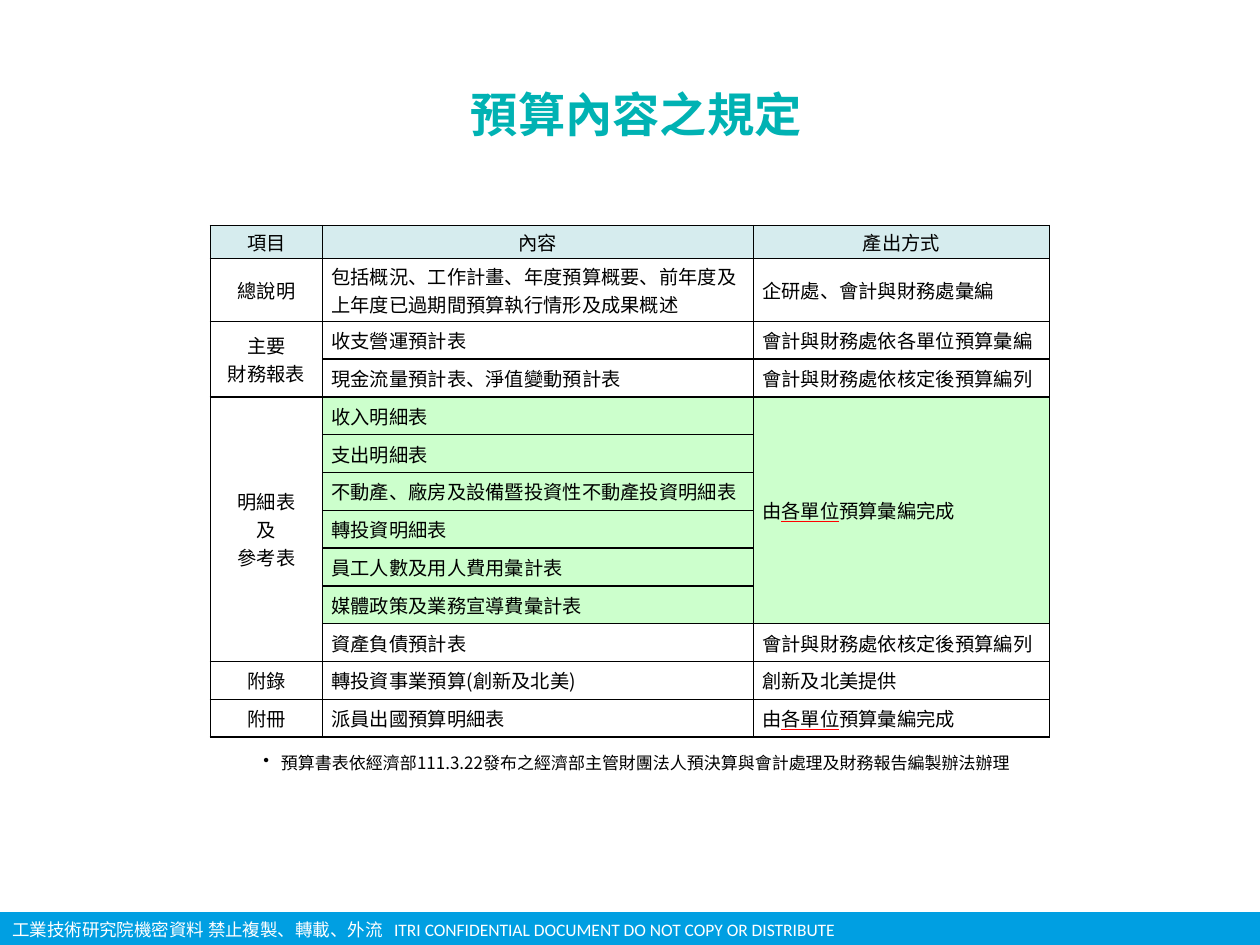
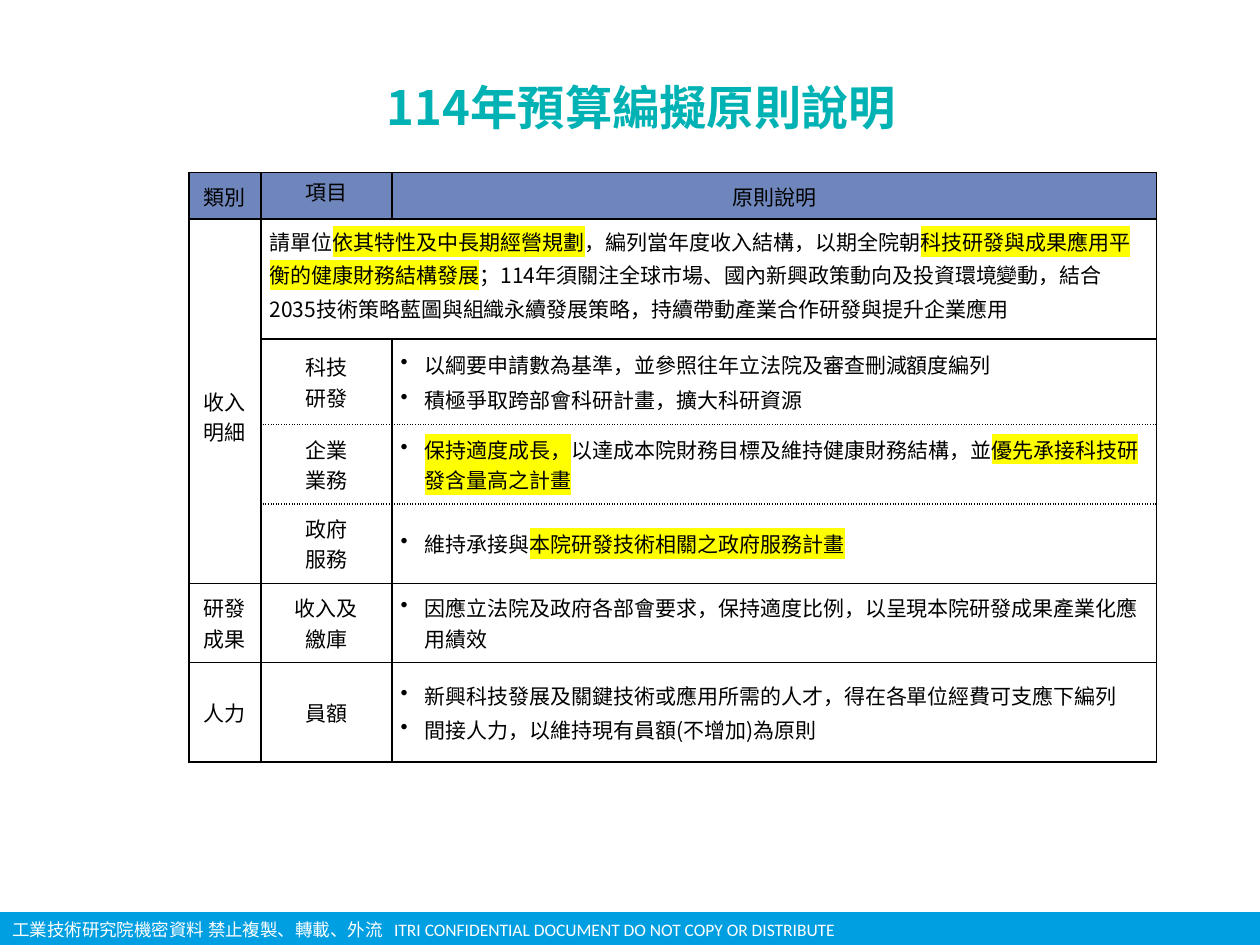
"""Build two slides on budget content rules and budget drafting principles."""
from copy import deepcopy
from dataclasses import dataclass

from lxml.etree import SubElement
from pptx import Presentation
from pptx.dml.color import RGBColor
from pptx.enum.shapes import MSO_SHAPE
from pptx.enum.text import MSO_ANCHOR, PP_ALIGN
from pptx.oxml import parse_xml
from pptx.oxml.ns import nsdecls, qn
from pptx.util import Inches, Pt


@dataclass(frozen=True)
class Theme:
    teal: str = "00B2B3"
    band: str = "009FE2"
    white: str = "FFFFFF"
    black: str = "000000"
    pale_blue: str = "D6ECEE"
    slate_blue: str = "6F86BC"
    green: str = "CCFFCC"
    yellow: str = "FFFF00"
    red: str = "FF0000"
    font: str = "Noto Sans CJK SC"
    footer_font: str = "Calibri"
    title_size: float = 27
    footer_size: float = 10
    note_size: float = 9.7


theme = Theme()
HIGHLIGHT = f'<a:highlight {nsdecls("a")}><a:srgbClr val="{theme.yellow}"/></a:highlight>'
UNDERLINE = f'<a:uFill {nsdecls("a")}><a:solidFill><a:srgbClr val="{theme.red}"/></a:solidFill></a:uFill>'


def write_text(frame, paragraphs, size, color, name=theme.font, bold=False, align=PP_ALIGN.LEFT,
               indent=0.19, emphasis=None, spacing=None, tab=None):
    """Write paragraphs; a leading bullet sign makes a list item and bars enclose emphasis."""
    frame.word_wrap = True
    font_format = {"size": Pt(size), "name": name, "bold": bold}
    for index, text in enumerate(paragraphs):
        paragraph = frame.add_paragraph() if index else frame.paragraphs[0]
        properties = paragraph._p.get_or_add_pPr()
        if text.startswith("•"):
            text = text[1:]
            properties.set("marL", str(Inches(indent)))
            properties.set("indent", str(-Inches(indent)))
            SubElement(properties, qn("a:buChar"), char="•")
        if tab:
            tabs = SubElement(properties, qn("a:tabLst"))
            SubElement(tabs, qn("a:tab"), pos=str(Inches(tab)), algn="l")
        paragraph.alignment = align
        if spacing:
            paragraph.line_spacing = spacing
        if index:
            paragraph.space_before = Pt(size * 0.2)
        for part, piece in enumerate(text.split("|")):
            for line_number, line in enumerate(piece.split("\n")):
                if line_number:
                    paragraph.add_line_break()
                if not line:
                    continue
                run = paragraph.add_run()
                run.text = line
                for attribute, value in font_format.items():
                    setattr(run.font, attribute, value)
                run.font.color.rgb = RGBColor.from_string(color)
                latin = run._r.rPr.find(qn("a:latin"))
                east_asian = deepcopy(latin)
                east_asian.tag = qn("a:ea")
                east_asian.set("typeface", theme.font)
                latin.addnext(east_asian)
                if part % 2:
                    run.font.underline = emphasis == UNDERLINE
                    latin.addprevious(parse_xml(emphasis))
        for line_break in paragraph._p.findall(qn("a:br")):
            line_break.insert(0, deepcopy(paragraph.runs[0]._r.rPr))


def draw_border(cell, side, dash):
    """Draw one black cell border."""
    line = SubElement(cell._tc.get_or_add_tcPr(), qn(f"a:ln{side}"), w=str(Pt(1)))
    fill = SubElement(line, qn("a:solidFill"))
    SubElement(fill, qn("a:srgbClr"), val=theme.black)
    SubElement(line, qn("a:prstDash"), val=dash)


BY_UNITS = "由|各單位|預算彙編完成"
BY_APPROVED = "會計與財務處依核定後預算編列"
pages = [
    {
        "title": "預算內容之規定", "title_at": (0.05, 0.62),
        "table_at": (1.67, 1.79), "size": 11, "emphasis": UNDERLINE,
        "columns": [0.89, 3.42, 2.35], "heights": [0.26, 0.5] + [0.3] * 11,
        "header_fill": theme.pale_blue, "tight": True, "centered": 1,
        "merges": [(2, 0, 3, 0), (4, 0, 10, 0), (4, 2, 9, 2)],
        "green_rows": range(4, 10), "dotted_below": [], "top_cells": [], "lowered": [],
        "rows": [
            ["項目", "內容", "產出方式"],
            ["總說明", "包括概況、工作計畫、年度預算概要、前年度及上年度已過期間預算執行情形及成果概述",
             "企研處、會計與財務處彙編"],
            ["主要\n財務報表", "收支營運預計表", "會計與財務處依各單位預算彙編"],
            [None, "現金流量預計表、淨值變動預計表", BY_APPROVED],
            ["明細表\n及\n參考表", "收入明細表", BY_UNITS],
            [None, "支出明細表", None],
            [None, "不動產、廠房及設備暨投資性不動產投資明細表", None],
            [None, "轉投資明細表", None],
            [None, "員工人數及用人費用彙計表", None],
            [None, "媒體政策及業務宣導費彙計表", None],
            [None, "資產負債預計表", BY_APPROVED],
            ["附錄", "轉投資事業預算(創新及北美)", "創新及北美提供"],
            ["附冊", "派員出國預算明細表", BY_UNITS],
        ],
        "note": "•預算書表依經濟部111.3.22發布之經濟部主管財團法人預決算與會計處理及財務報告編製辦法辦理",
    },
    {
        "title": "114年預算編擬原則說明", "title_at": (0.09, 0.57),
        "table_at": (1.5, 1.37), "size": 12, "emphasis": HIGHLIGHT,
        "columns": [0.57, 1.04, 6.07], "heights": [0.37, 0.95, 0.68, 0.63, 0.63, 0.63, 0.79],
        "header_fill": theme.slate_blue, "tight": False, "centered": 2,
        "merges": [(1, 0, 4, 0), (1, 1, 1, 2)],
        "green_rows": [], "dotted_below": [2, 3], "top_cells": [(0, 1), (1, 1)], "lowered": [(1, 0)],
        "rows": [
            ["類別", "項目", "原則說明"],
            ["收入\n明細", "請單位|依其特性及中長期經營規劃|，編列當年度收入結構，以期全院朝"
             "|科技研發與成果應用平衡的健康財務結構發展|；114年須關注全球市場、國內新興政策動向及投資環境變動，"
             "結合2035技術策略藍圖與組織永續發展策略，持續帶動產業合作研發與提升企業應用", None],
            [None, "科技\n研發", ["•以綱要申請數為基準，並參照往年立法院及審查刪減額度編列",
                              "•積極爭取跨部會科研計畫，擴大科研資源"]],
            [None, "企業\n業務", "•|保持適度成長，|以達成本院財務目標及維持健康財務結構，並|優先承接科技研發含量高之計畫|"],
            [None, "政府\n服務", "•維持承接與|本院研發技術相關之政府服務計畫|"],
            ["研發\n成果", "收入及\n繳庫",
             "•因應立法院及政府各部會要求，保持適度比例，以呈現本院研發成果產業化應用績效"],
            ["人力", "員額", ["•新興科技發展及關鍵技術或應用所需的人才，得在各單位經費可支應下編列",
                          "•間接人力，以維持現有員額(不增加)為原則"]],
        ],
        "note": None,
    },
]

presentation = Presentation()
presentation.slide_width = Inches(10)
presentation.slide_height = Inches(7.5)

for page in pages:
    slide = presentation.slides.add_slide(presentation.slide_layouts[6])

    band = slide.shapes.add_shape(MSO_SHAPE.RECTANGLE, 0, Inches(7.24), Inches(10), Inches(0.26))
    band.shadow.inherit = False
    band.fill.solid()
    band.fill.fore_color.rgb = RGBColor.from_string(theme.band)
    band.line.fill.background()

    texts = [
        ((0, 7.24, 7.6, 0.27), 0.1,
         "工業技術研究院機密資料 禁止複製、轉載、外流\tITRI CONFIDENTIAL DOCUMENT DO NOT COPY OR DISTRIBUTE",
         {"size": theme.footer_size, "color": theme.white, "name": theme.footer_font, "tab": 3.03}),
        ((*page["title_at"], 10, 0.56), 0, page["title"],
         {"size": theme.title_size, "color": theme.teal, "bold": True, "align": PP_ALIGN.CENTER}),
    ]
    if page["note"]:
        texts.append(((1.67, 5.92, 6.77, 0.26), 0, page["note"],
                      {"size": theme.note_size, "color": theme.black, "align": PP_ALIGN.CENTER,
                       "indent": 0.14}))
    for place, side_margin, text, text_format in texts:
        frame = slide.shapes.add_textbox(*map(Inches, place)).text_frame
        frame_format = {"margin_left": Inches(side_margin), "margin_right": Inches(side_margin),
                        "margin_top": 0, "margin_bottom": 0, "vertical_anchor": MSO_ANCHOR.MIDDLE}
        for attribute, value in frame_format.items():
            setattr(frame, attribute, value)
        write_text(frame, [text], **text_format)

    columns, heights = page["columns"], page["heights"]
    table = slide.shapes.add_table(len(heights), len(columns), *map(Inches, page["table_at"]),
                                   Inches(sum(columns)), Inches(sum(heights))).table
    table.first_row = False
    table.horz_banding = False
    for column, width in zip(table.columns, columns):
        column.width = Inches(width)
    for row, height in zip(table.rows, heights):
        row.height = Inches(height)
    for top, left, bottom, right in page["merges"]:
        table.cell(top, left).merge(table.cell(bottom, right))

    for row_index, row in enumerate(page["rows"]):
        for column_index, content in enumerate(row):
            cell = table.cell(row_index, column_index)
            position = (row_index, column_index)
            wide = cell.is_merge_origin and cell.span_width > 1
            centered = row_index == 0 or (column_index < page["centered"] and not wide)
            margin_x, margin_y = (0, 0) if page["tight"] and centered else (0.07, 0.03)
            extra_top = 0.24 if position in page["lowered"] else 0
            cell_format = {
                "margin_left": Inches(margin_x), "margin_right": Inches(margin_x),
                "margin_top": Inches(margin_y + extra_top), "margin_bottom": Inches(margin_y),
                "vertical_anchor": MSO_ANCHOR.TOP if position in page["top_cells"] else MSO_ANCHOR.MIDDLE,
            }
            for attribute, value in cell_format.items():
                setattr(cell, attribute, value)

            dotted = {"T": row_index - 1 in page["dotted_below"], "B": row_index in page["dotted_below"]}
            for side in "LRTB":
                draw_border(cell, side, "sysDot" if column_index and dotted.get(side) else "solid")

            if row_index == 0:
                fill_color = page["header_fill"]
            else:
                fill_color = theme.green if column_index and row_index in page["green_rows"] else None
            if fill_color:
                cell.fill.solid()
                cell.fill.fore_color.rgb = RGBColor.from_string(fill_color)
            else:
                cell.fill.background()

            if content:
                write_text(cell.text_frame, [content] if isinstance(content, str) else content,
                           page["size"], theme.black, emphasis=page["emphasis"],
                           align=PP_ALIGN.CENTER if centered else PP_ALIGN.LEFT,
                           spacing=1.1 if wide else None)

presentation.save("out.pptx")
